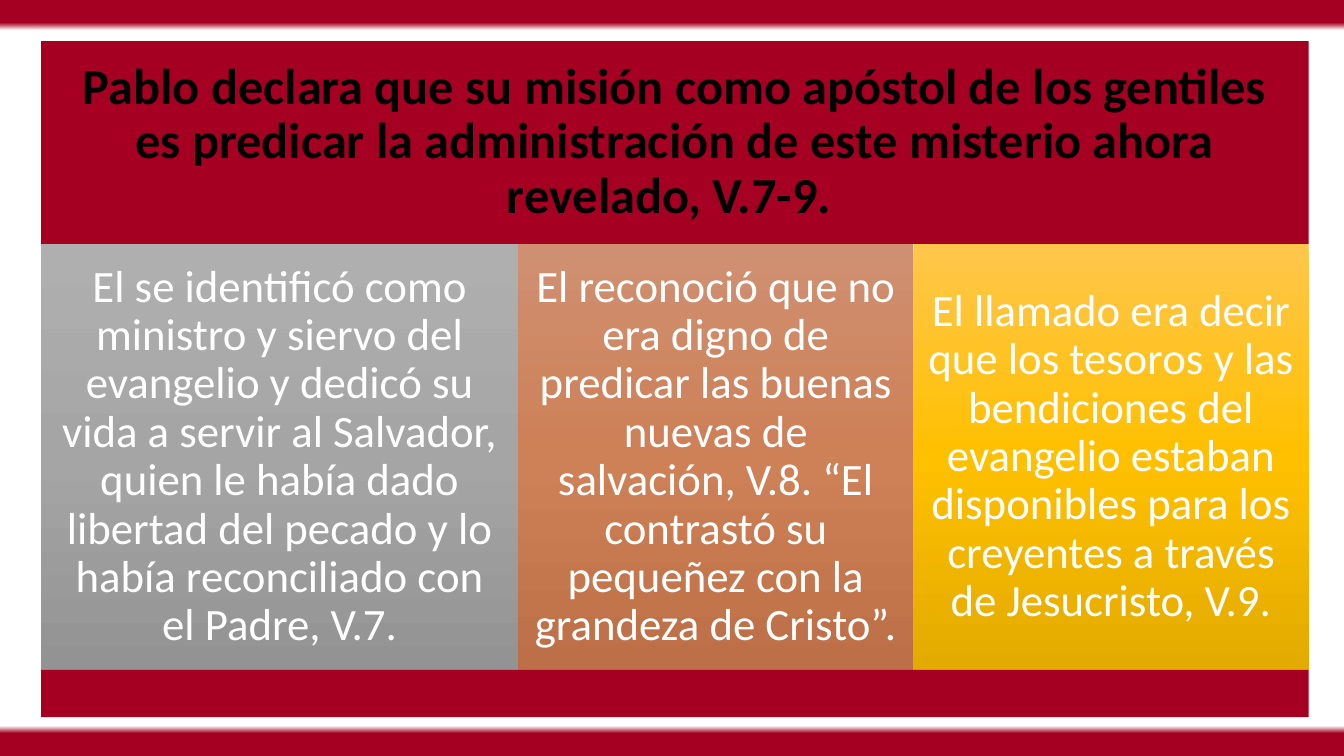
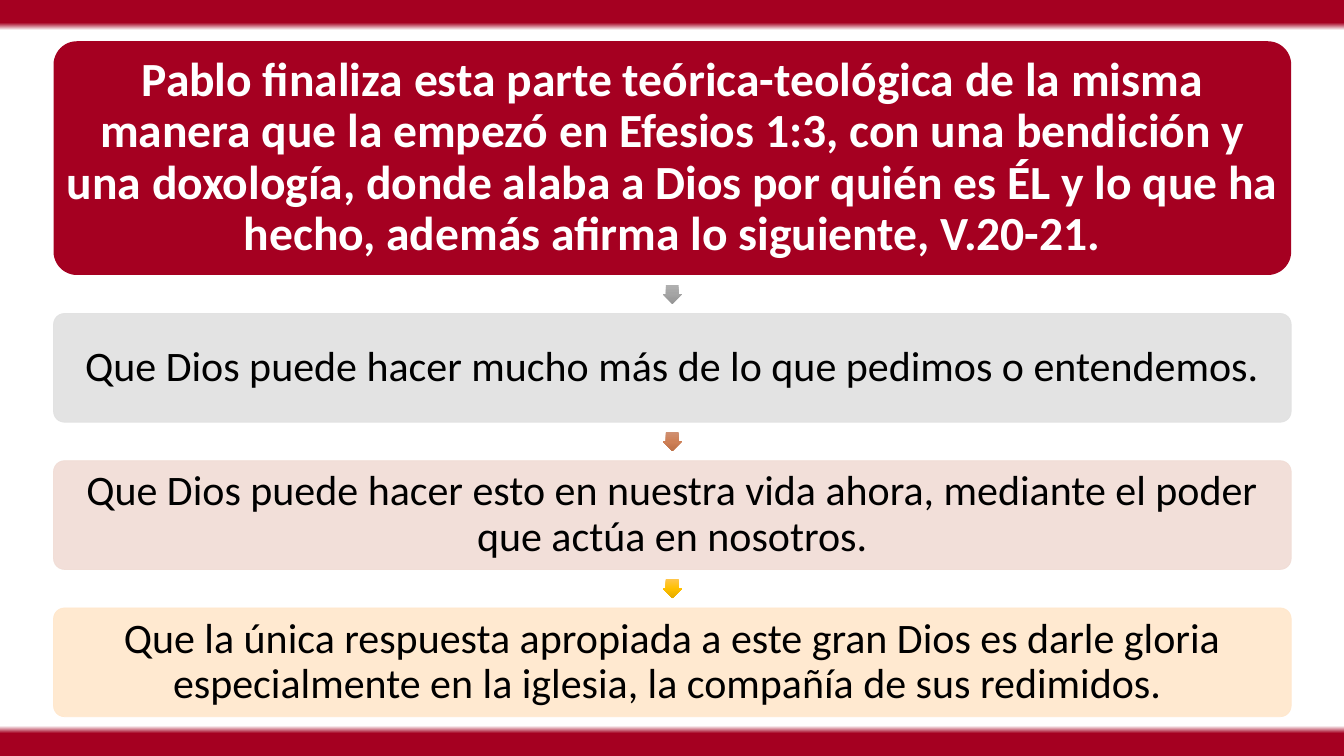
"""Build two slides on Ephesians 3: a three-column panel and a stack of steps."""
import pptx
import pptx.util
import pptx.dml.color
import pptx.enum.shapes
import pptx.enum.text
import pptx.oxml.ns
from dataclasses import dataclass
from lxml import etree

Cm = pptx.util.Cm
Pt = pptx.util.Pt
RGB = pptx.dml.color.RGBColor.from_string
KIND = pptx.enum.shapes.MSO_SHAPE
qn = pptx.oxml.ns.qn


@dataclass(frozen=True)
class Theme:
    font: str = "Calibri"
    red: str = "A50021"
    white: str = "FFFFFF"
    black: str = "000000"
    blends: tuple = (
        ("AFAFAF", "A5A5A5", "939393"),
        ("CF9072", "CE8056", "BD7047"),
        ("FFC64B", "FFC000", "E3AB00"),
    )
    tints: tuple = ("E1E1E1", "F1DCD5", "FFE7CB")
    head: int = 36
    lead: int = 34
    body: int = 32
    step: int = 30


T = Theme()

PANEL = {
    "head": "Pablo declara que su misión como apóstol de los gentiles es predicar la administración de este misterio ahora revelado, V.7-9. ",
    "cols": [
        (12.02, "El se identificó como ministro y siervo del evangelio y dedicó su vida a servir al Salvador, quien le había dado libertad del pecado y lo había reconciliado con el Padre, V.7."),
        (9.96, "El reconoció que no era digno de predicar las buenas nuevas de salvación, V.8. “El contrastó su pequeñez con la grandeza de Cristo”."),
        (9.96, "El llamado era decir que los tesoros y las bendiciones del evangelio estaban disponibles para los creyentes a través de Jesucristo, V.9."),
    ],
}

STACK = {
    "head": "Pablo finaliza esta parte teórica-teológica de la misma manera que la empezó en Efesios 1:3, con una bendición y una doxología, donde alaba a Dios por quién es ÉL y lo que ha hecho, además afirma lo siguiente, V.20-21.",
    "steps": [
        "Que Dios puede hacer mucho más de lo que pedimos o entendemos.",
        "Que Dios puede hacer esto en nuestra vida ahora, mediante el poder que actúa en nosotros.",
        "Que la única respuesta apropiada a este gran Dios es darle gloria especialmente en la iglesia, la compañía de sus redimidos. ",
    ],
}


def blend(fill, host, stops):
    fill.gradient()
    fill.gradient_angle = 270
    rows = host.element.find(".//" + qn("a:gsLst"))
    for old in list(rows):
        rows.remove(old)
    for pos, hue in stops:
        stop = etree.SubElement(rows, qn("a:gs"), pos=str(pos * 1000))
        etree.SubElement(stop, qn("a:srgbClr"), val=hue)


def draw(slide, kind, box, fill):
    shape = slide.shapes.add_shape(kind, *map(Cm, box))
    shape.shadow.inherit = False
    shape.line.fill.background()
    if isinstance(fill, tuple):
        blend(shape.fill, shape, zip((0, 50, 100), fill))
    else:
        shape.fill.solid()
        shape.fill.fore_color.rgb = RGB(fill)
    if kind == KIND.ROUNDED_RECTANGLE:
        shape.adjustments[0] = 0.1
    return shape


def write(shape, text, size, hue, pad, bold=False):
    frame = shape.text_frame
    frame.word_wrap = True
    frame.vertical_anchor = pptx.enum.text.MSO_ANCHOR.MIDDLE
    frame.margin_left = frame.margin_right = Cm(pad)
    frame.margin_top = frame.margin_bottom = Cm(pad)
    para = frame.paragraphs[0]
    para.alignment = pptx.enum.text.PP_ALIGN.CENTER
    para.line_spacing = 0.9
    run = para.add_run()
    run.text = text
    run.font.name = T.font
    run.font.size = Pt(size)
    run.font.bold = bold
    run.font.color.rgb = RGB(hue)


def soften(shape, hue):
    shape.line.color.rgb = RGB(hue)
    shape.line.width = Pt(0.5)
    for tone in shape.element.spPr.iter(qn("a:srgbClr")):
        etree.SubElement(tone, qn("a:alpha"), val="90000")


def panel(slide):
    left, top, high, tall, foot = 1.04, 1.04, 5.11, 10.73, 1.19
    wide = sum(width for width, _ in PANEL["cols"])
    head = draw(slide, KIND.RECTANGLE, (left, top, wide, high), T.red)
    write(head, PANEL["head"], T.head, T.black, 0.38, True)
    x, y = left, top + high
    for (width, text), fill in zip(PANEL["cols"], T.blends):
        col = draw(slide, KIND.RECTANGLE, (x, y, width, tall), fill)
        write(col, text, T.body, T.white, 0.33)
        x += width
    draw(slide, KIND.RECTANGLE, (left, y + tall, wide, foot), T.red)


def stack(slide):
    left, top, wide, high = 1.35, 1.04, 31.19, 5.89
    tall, gap, tip = 2.74, 0.97, 0.48
    head = draw(slide, KIND.ROUNDED_RECTANGLE, (left, top, wide, high), T.red)
    write(head, STACK["head"], T.lead, T.white, 0.13, True)
    y = top + high
    for text, fill, tint in zip(STACK["steps"], T.blends, T.tints):
        spot = (left + (wide - tip) / 2, y + (gap - tip) / 2, tip, tip)
        arrow = draw(slide, KIND.DOWN_ARROW, spot, fill)
        arrow.adjustments[0] = 0.67
        arrow.adjustments[1] = 0.5
        y += gap
        step = draw(slide, KIND.ROUNDED_RECTANGLE, (left, y, wide, tall), tint)
        soften(step, tint)
        write(step, text, T.step, T.black, 0.1)
        y += tall


def main():
    deck = pptx.Presentation()
    deck.slide_width, deck.slide_height = Cm(33.87), Cm(19.05)
    base = deck.slide_master
    bands = ((3, T.red), (4, T.white), (96, T.white), (97, T.red))
    blend(base.background.fill, base, bands)
    for build in (panel, stack):
        build(deck.slides.add_slide(deck.slide_layouts[6]))
    deck.save("out.pptx")


if __name__ == "__main__":
    main()
